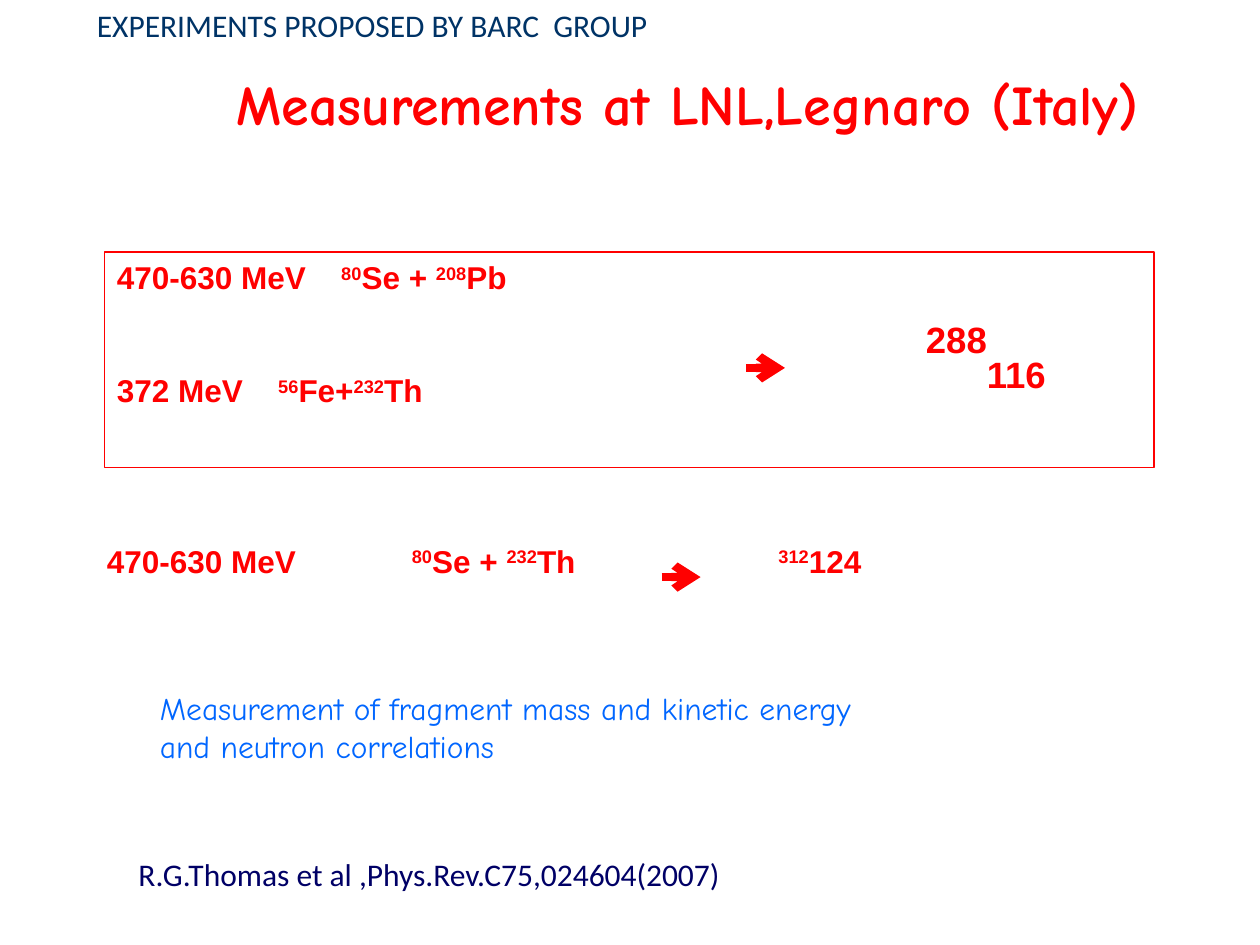
import pptx
import pptx.dml.color
import pptx.enum.shapes
import pptx.enum.text
import pptx.oxml
import pptx.oxml.ns
import pptx.util
from pptx.util import Inches

RED = pptx.dml.color.RGBColor(0xFF, 0x00, 0x00)
BLUE = pptx.dml.color.RGBColor(0x00, 0x66, 0xFF)
NAVY = pptx.dml.color.RGBColor(0x00, 0x00, 0x66)
DARK_BLUE = pptx.dml.color.RGBColor(0x00, 0x33, 0x66)

SUPERSCRIPT = 30
SUBSCRIPT = -25
NAMESPACE = pptx.oxml.ns.nsdecls("a")
TEXT_SHADOW = (
    f'<a:effectLst {NAMESPACE}><a:outerShdw dist="35921" dir="2700000">'
    '<a:srgbClr val="EEECE1"/></a:outerShdw></a:effectLst>'
)


def format_run(run, font_name, size, color, bold=False):
    run.font.name = font_name
    run.font.size = pptx.util.Pt(size)
    run.font.color.rgb = color
    run.font.bold = bold


def add_formula(paragraph, parts, size=18):
    paragraph.alignment = pptx.enum.text.PP_ALIGN.LEFT
    for text, baseline in parts:
        run = paragraph.add_run()
        run.text = text
        format_run(run, "Arial", size, RED, bold=True)
        if baseline:
            run._r.get_or_add_rPr().set("baseline", str(baseline * 1000))


def add_tab_stop(paragraph, position):
    tab_list = pptx.oxml.parse_xml(
        f'<a:tabLst {NAMESPACE}><a:tab pos="{Inches(position)}" algn="l"/></a:tabLst>'
    )
    paragraph._p.get_or_add_pPr().append(tab_list)


def add_text_box(slide, left, top, width, height):
    box = slide.shapes.add_textbox(
        Inches(left), Inches(top), Inches(width), Inches(height)
    )
    box.text_frame.word_wrap = True
    return box.text_frame


def add_formula_box(slide, position, parts, size=18):
    text_frame = add_text_box(slide, *position)
    add_formula(text_frame.paragraphs[0], parts, size)


def add_note(slide, position, lines, font_name, color):
    text_frame = add_text_box(slide, *position)
    text_frame.text = "\n".join(lines)
    for paragraph in text_frame.paragraphs:
        format_run(paragraph.runs[0], font_name, 18, color)


def add_title(slide, text):
    title = slide.shapes.title
    title.left, title.top = Inches(0.92), Inches(0.42)
    title.width, title.height = Inches(9.08), Inches(0.79)
    title.text_frame.text = text
    title.text_frame.vertical_anchor = pptx.enum.text.MSO_ANCHOR.MIDDLE
    paragraph = title.text_frame.paragraphs[0]
    paragraph.alignment = pptx.enum.text.PP_ALIGN.CENTER
    run = paragraph.runs[0]
    format_run(run, "Comic Neue", 32, RED, bold=True)
    fill = run._r.rPr.find(pptx.oxml.ns.qn("a:solidFill"))
    fill.addnext(pptx.oxml.parse_xml(TEXT_SHADOW))


def add_reaction_frame(slide, reactions):
    frame = slide.shapes.add_shape(
        pptx.enum.shapes.MSO_SHAPE.RECTANGLE,
        Inches(0.83), Inches(2), Inches(8.33), Inches(1.71),
    )
    frame.shadow.inherit = False
    frame.fill.background()
    frame.line.color.rgb = RED
    frame.line.width = pptx.util.Pt(0.75)
    text_frame = frame.text_frame
    text_frame.vertical_anchor = pptx.enum.text.MSO_ANCHOR.TOP
    for index, (tab_position, parts) in enumerate(reactions):
        paragraph = text_frame.add_paragraph() if index else text_frame.paragraphs[0]
        add_formula(paragraph, parts)
        if index:
            paragraph.space_before = pptx.util.Pt(43)
        add_tab_stop(paragraph, tab_position)


def add_arrow(slide, left, top):
    arrow = slide.shapes.add_connector(
        pptx.enum.shapes.MSO_CONNECTOR.STRAIGHT,
        Inches(left), Inches(top), Inches(left + 0.31), Inches(top),
    )
    arrow.line.color.rgb = RED
    arrow.line.width = pptx.util.Pt(4.75)
    arrow.line._get_or_add_ln().append(
        pptx.oxml.parse_xml(f'<a:tailEnd {NAMESPACE} type="arrow"/>')
    )
    arrow._element.spPr.append(pptx.oxml.parse_xml(f"<a:effectLst {NAMESPACE}/>"))


def main():
    presentation = pptx.Presentation()
    presentation.slide_width, presentation.slide_height = Inches(10), Inches(7.5)
    slide = presentation.slides.add_slide(presentation.slide_layouts[5])

    add_title(slide, "Measurements at LNL,Legnaro (Italy)")
    selenium = [("80", SUPERSCRIPT), ("Se + ", 0)]
    thorium = [("232", SUPERSCRIPT), ("Th", 0)]
    lead = [("208", SUPERSCRIPT), ("Pb", 0)]
    iron = [("56", SUPERSCRIPT), ("Fe+", 0)]
    add_reaction_frame(slide, [
        (1.78, [("470-630 MeV\t", 0)] + selenium + lead),
        (1.28, [("372 MeV\t", 0)] + iron + thorium),
    ])
    add_arrow(slide, 5.92, 2.92)
    add_formula_box(
        slide, (7.25, 2.41, 1.32, 0.97),
        [("288", SUPERSCRIPT), ("116", SUBSCRIPT)], size=36,
    )

    add_formula_box(slide, (0.75, 4.25, 2.2, 0.5), [("470-630 MeV", 0)])
    add_formula_box(slide, (3.17, 4.25, 2.01, 0.5), selenium + thorium)
    add_arrow(slide, 5.25, 4.58)
    add_formula_box(slide, (6.08, 4.25, 5, 0.9), [("312", SUPERSCRIPT), ("124", 0)])

    add_note(slide, (1.17, 5.42, 8.18, 0.9), [
        "Measurement of fragment mass and kinetic energy",
        "and neutron correlations",
    ], "Comic Neue", BLUE)
    add_note(slide, (1, 6.74, 7.58, 0.5),
             ["R.G.Thomas et al ,Phys.Rev.C75,024604(2007)"], "Calibri", NAVY)
    add_note(slide, (0.67, 0, 8.92, 0.5),
             ["EXPERIMENTS PROPOSED BY BARC  GROUP"], "Calibri", DARK_BLUE)

    presentation.save("out.pptx")


if __name__ == "__main__":
    main()
